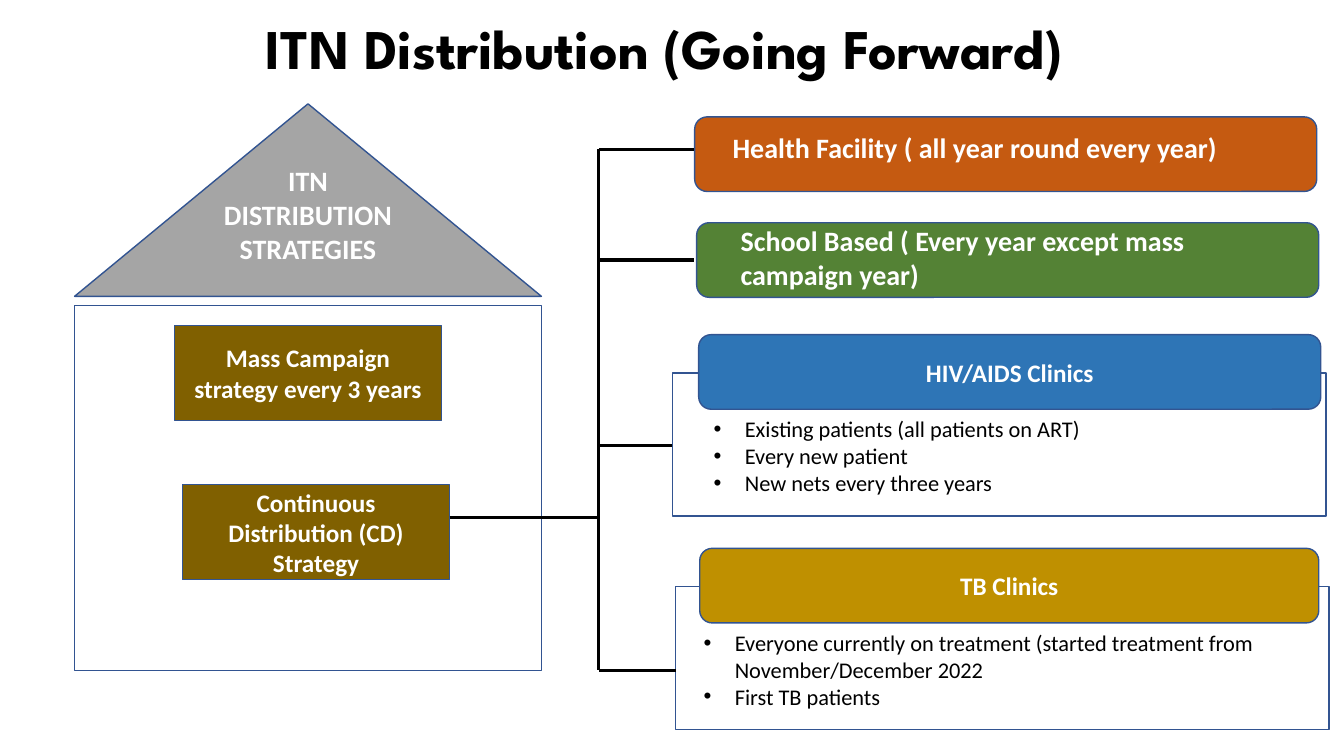
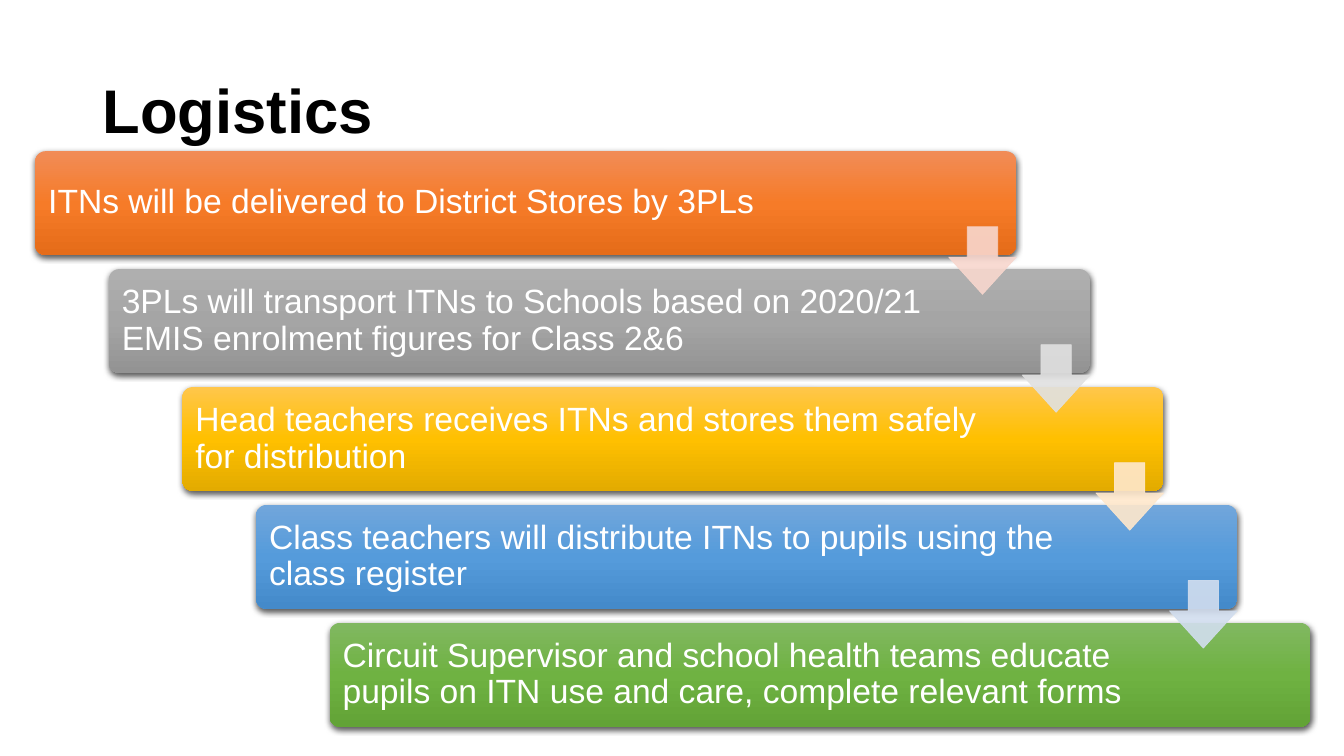
from lxml import etree
from pptx import Presentation
from pptx.dml.color import RGBColor
from pptx.enum.shapes import MSO_CONNECTOR, MSO_SHAPE
from pptx.enum.text import MSO_ANCHOR, PP_ALIGN
from pptx.oxml import parse_xml
from pptx.oxml.ns import nsdecls, qn
from pptx.util import Inches, Pt

RECTANGLE = MSO_SHAPE.RECTANGLE
ROUNDED = MSO_SHAPE.ROUNDED_RECTANGLE
TRIANGLE = MSO_SHAPE.ISOSCELES_TRIANGLE
DOWN_ARROW = MSO_SHAPE.DOWN_ARROW
STRAIGHT = MSO_CONNECTOR.STRAIGHT
LEFT, CENTER = PP_ALIGN.LEFT, PP_ALIGN.CENTER
TOP, MIDDLE = MSO_ANCHOR.TOP, MSO_ANCHOR.MIDDLE

BLACK, WHITE, OUTLINE = "000000", "FFFFFF", "325491"
STRATEGY_FILL = "806000"
INSETS = (0.1, 0.05, 0.1, 0.05)


def color(hex_string):
    return RGBColor.from_string(hex_string)


def write_text(shape, text, *, size, font="Calibri", text_color=WHITE, bold=False,
               align=LEFT, anchor=MIDDLE, insets=INSETS, spacing=None, bullet=False):
    """Fill a shape with text, one paragraph per line."""
    frame = shape.text_frame
    frame.word_wrap = True
    frame.vertical_anchor = anchor
    (frame.margin_left, frame.margin_top,
     frame.margin_right, frame.margin_bottom) = map(Inches, insets)
    for index, line in enumerate(text.split("\n")):
        paragraph = frame.add_paragraph() if index else frame.paragraphs[0]
        paragraph.alignment = align
        if spacing:
            paragraph.line_spacing = spacing
        if bullet:
            properties = paragraph._p.get_or_add_pPr()
            properties.set("marL", str(Inches(0.31)))
            properties.set("indent", str(-Inches(0.31)))
            etree.SubElement(properties, qn("a:buFont"), typeface="Arial")
            etree.SubElement(properties, qn("a:buChar"), char="•")
        run = paragraph.add_run()
        run.text = line
        run.font.name = font
        run.font.size = Pt(size)
        run.font.bold = bold
        run.font.color.rgb = color(text_color)


class Deck:
    """Holds the presentation, its style and the current slide."""

    def __init__(self):
        self.presentation = Presentation()
        self.presentation.slide_width = Inches(13.33)
        self.presentation.slide_height = Inches(7.5)
        self.slide = None

    def new_slide(self, title, box, **text_format):
        blank = self.presentation.slide_layouts[6]
        self.slide = self.presentation.slides.add_slide(blank)
        self.text(title, box, bold=True, text_color=BLACK, **text_format)

    def text(self, text, box, **text_format):
        shape = self.slide.shapes.add_textbox(*map(Inches, box))
        write_text(shape, text, **text_format)

    def shape(self, kind, box, fill=None, line=OUTLINE, line_width=1, adjustments=()):
        shape = self.slide.shapes.add_shape(kind, *map(Inches, box))
        shape.shadow.inherit = False
        for index, value in enumerate(adjustments):
            shape.adjustments[index] = value
        if fill:
            shape.fill.solid()
            shape.fill.fore_color.rgb = color(fill)
        else:
            shape.fill.background()
        if line:
            shape.line.color.rgb = color(line)
            shape.line.width = Pt(line_width)
        else:
            shape.line.fill.background()
        return shape

    def label(self, kind, box, fill, text, size=18, align=CENTER, insets=INSETS):
        shape = self.shape(kind, box, fill)
        write_text(shape, text, size=size, bold=True, align=align, insets=insets)

    def line(self, x1, y1, x2, y2):
        connector = self.slide.shapes.add_connector(
            STRAIGHT, *map(Inches, (x1, y1, x2, y2)))
        connector.line.color.rgb = color(BLACK)
        connector.line.width = Pt(2.25)
        etree.SubElement(connector._element.spPr, qn("a:effectLst"))

    def step(self, box, shades, text):
        shape = self.shape(ROUNDED, box, line=None, adjustments=[0.1])
        properties = shape._element.spPr
        stops = "".join(
            f'<a:gs pos="{position}"><a:srgbClr val="{shade}"/></a:gs>'
            for position, shade in zip((0, 50000, 100000), shades))
        properties.replace(properties.find(qn("a:noFill")), parse_xml(
            f'<a:gradFill {nsdecls("a")}><a:gsLst>{stops}</a:gsLst>'
            '<a:lin ang="5400000" scaled="0"/></a:gradFill>'))
        properties.find(qn("a:effectLst")).append(parse_xml(
            f'<a:outerShdw {nsdecls("a")} blurRad="{Pt(4.5)}" dist="{Pt(1.5)}" '
            'dir="5400000" algn="ctr" rotWithShape="0"><a:srgbClr val="000000">'
            '<a:alpha val="63000"/></a:srgbClr></a:outerShdw>'))
        write_text(shape, text, size=24, font="Arial", spacing=0.9,
                   insets=(0.1, 0.1, 1.5, 0.1))

    def step_arrow(self, left, top, fill):
        shape = self.shape(DOWN_ARROW, (left, top, 0.67, 0.67), fill, fill, 0.5,
                           adjustments=[0.45, 0.55])
        # Fill and outline are both slightly transparent
        for solid_color in shape._element.spPr.iter(qn("a:srgbClr")):
            etree.SubElement(solid_color, qn("a:alpha"), val="90000")


def build_distribution(deck):
    deck.new_slide("ITN Distribution (Going Forward) ", (0, -0.01, 13.33, 0.95),
                   size=40, font="League Spartan", align=CENTER)

    # House with the two strategies
    deck.label(TRIANGLE, (0.74, 1.03, 4.63, 1.91), "A5A5A5",
               "ITN DISTRIBUTION STRATEGIES", size=20, insets=(0.1, 0.05, 0.1, 0.72))
    deck.shape(RECTANGLE, (0.74, 3.03, 4.63, 3.62))
    deck.label(RECTANGLE, (1.73, 3.23, 2.65, 0.94), STRATEGY_FILL,
               "Mass Campaign strategy every 3 years")
    deck.label(RECTANGLE, (1.81, 4.81, 2.65, 0.94), STRATEGY_FILL,
               "Continuous Distribution (CD) Strategy")

    # Channels without details
    deck.label(ROUNDED, (6.89, 1.16, 6.17, 0.74), "C55A11",
               "Health Facility ( all year round every year)", size=20,
               align=LEFT, insets=(0.34, 0, 0.1, 0.13))
    deck.label(ROUNDED, (6.91, 2.21, 6.17, 0.74), "548235",
               "School Based ( Every year except mass campaign year)", size=20,
               align=LEFT, insets=(0.4, 0, 0.17, 0.05))

    # Clinic panels: panel left and top, header left and width, text left
    clinics = [
        (6.67, 3.7, 6.93, 6.17, 6.98, "2E75B6", "HIV/AIDS Clinics",
         "Existing patients (all patients on ART)\nEvery new patient\n"
         "New nets every three years"),
        (6.7, 5.82, 6.94, 6.14, 6.88, "BF9000", "TB Clinics",
         "Everyone currently on treatment (started treatment from "
         "November/December 2022\nFirst TB patients"),
    ]
    for left, top, header_left, header_width, text_left, fill, name, details in clinics:
        deck.shape(RECTANGLE, (left, top, 6.48, 1.42))
        deck.text(details, (text_left, top + 0.37, 5.94, 1.18), size=16,
                  text_color=BLACK, anchor=TOP, bullet=True)
        deck.label(ROUNDED, (header_left, top - 0.38, header_width, 0.74), fill, name)

    # Trunk and branches from the continuous strategy
    trunk = 5.94
    deck.line(4.46, 5.13, trunk, 5.13)
    deck.line(trunk, 1.48, trunk, 6.65)
    for y, end in ((1.48, 6.88), (2.58, 6.88), (4.42, 6.67), (6.65, 6.7)):
        deck.line(trunk, y, end, y)


def build_logistics(deck):
    deck.new_slide("Logistics", (0.92, 0.4, 11.5, 1.45), size=44, font="Arial",
                   spacing=0.9)
    steps = [
        (("F18C57", "F67B28", "E56C19"), "F8D7CE",
         "ITNs will be delivered to District Stores by 3PLs"),
        (("AFAFAF", "A5A5A5", "939393"), "E1E1E1",
         "3PLs will transport ITNs to Schools based on 2020/21 EMIS enrolment "
         "figures for Class 2&6"),
        (("FFC64B", "FFC000", "E3AB00"), "FFE8CC",
         "Head teachers receives ITNs and stores them safely for distribution"),
        (("71A6DB", "559BDB", "448ACA"), "D2DEEF",
         "Class teachers will distribute ITNs to pupils using the class register"),
        (("81B861", "6FB242", "62A336"), None,
         "Circuit Supervisor and school health teams educate pupils on ITN use "
         "and care, complete relevant forms"),
    ]
    corners = [(0.35 + 0.73 * index, 1.5 + 1.17 * index) for index in range(len(steps))]
    for (left, top), (shades, _, text) in zip(corners, steps):
        deck.step((left, top, 9.73, 1.03), shades, text)

    # Arrows lie above the boxes they join
    for (left, top), (_, arrow_fill, _) in zip(corners, steps[:-1]):
        deck.step_arrow(left + 9.06, top + 0.75, arrow_fill)


def main():
    deck = Deck()
    build_distribution(deck)
    build_logistics(deck)
    deck.presentation.save("out.pptx")


if __name__ == "__main__":
    main()
